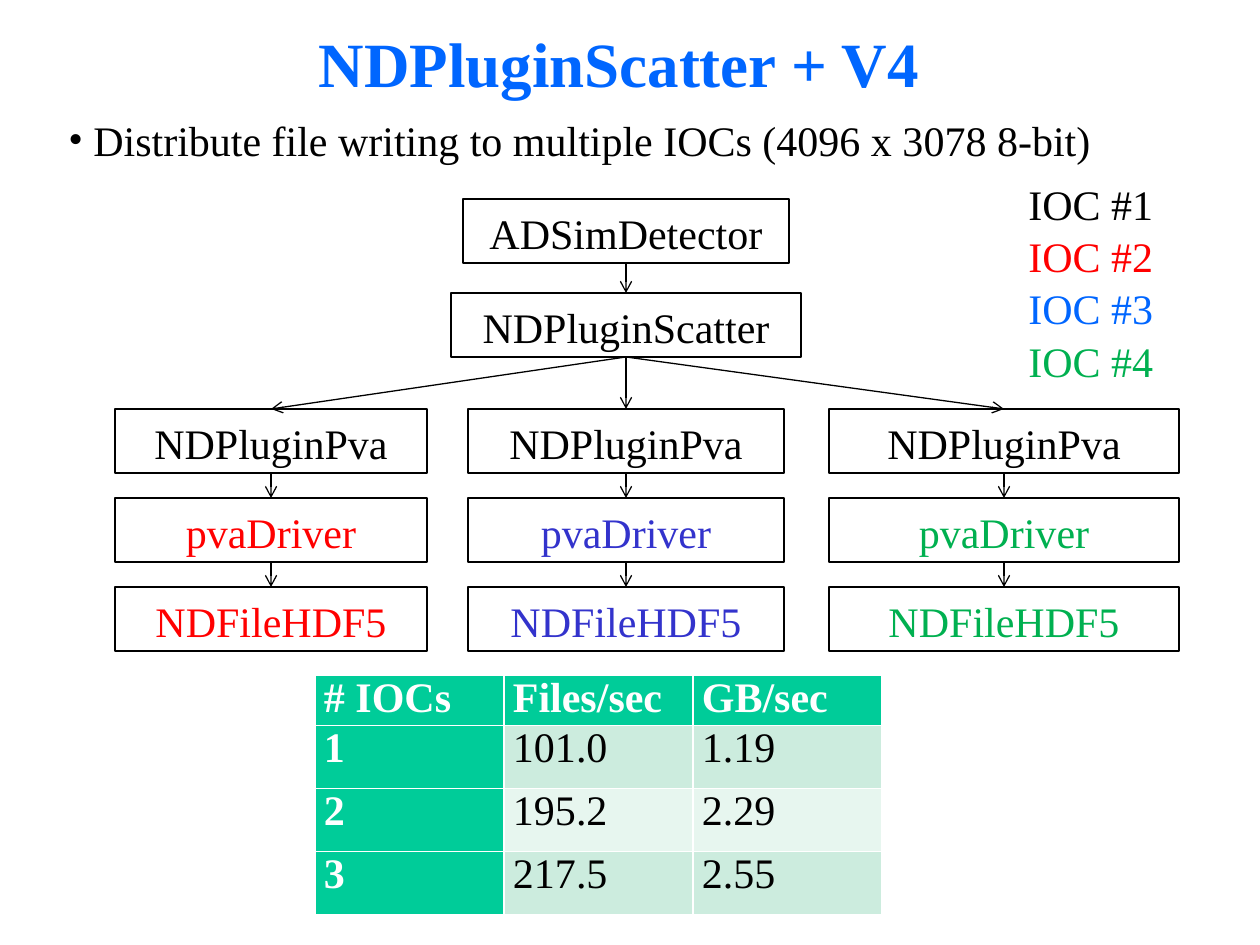
from lxml import etree
from pptx import Presentation, util as u
from pptx.dml.color import RGBColor
from pptx.enum import shapes, text
from pptx.oxml.ns import qn

PX = 914400 / 126
BLACK, WHITE, RED = "000000", "FFFFFF", "FF0000"
BLUE, NAVY, GREEN = "0066FF", "3333CC", "00B050"
TOP, FOOT = 0, 2  # connection sites of a rectangle


def px(n):
    return u.Emu(round(n * PX))


def rgb(code):
    return RGBColor.from_string(code)


class Deck:
    face, size, thin = "Times New Roman", 24, 0.75

    def __init__(self, wide, high):
        self.prs = Presentation()
        self.prs.slide_width, self.prs.slide_height = px(wide), px(high)
        self.slide = self.prs.slides.add_slide(self.prs.slide_layouts[5])

    def style(self, para, color=BLACK, size=None, bold=False, align=None):
        font = para.font
        font.name, font.size, font.bold = self.face, u.Pt(size or self.size), bold
        font.color.rgb = rgb(color)
        para.alignment = align

    def title(self, words, x, y, w, h):
        head = self.slide.shapes.title
        head.left, head.top, head.width, head.height = map(px, (x, y, w, h))
        frame = head.text_frame
        frame.text = words
        frame.vertical_anchor = text.MSO_ANCHOR.MIDDLE
        self.style(frame.paragraphs[0], BLUE, 36, True, text.PP_ALIGN.CENTER)

    def note(self, lines, x, y, w, h, space=1.04):
        frame = self.slide.shapes.add_textbox(*map(px, (x, y, w, h))).text_frame
        frame.word_wrap = True
        frame.text = "\n".join(words for words, _ in lines)
        for para, (_, color) in zip(frame.paragraphs, lines):
            self.style(para, color)
            para.line_spacing = space
        return frame

    def bullet(self, words, x, y, w, h):
        para = self.note([(words, BLACK)], x, y, w, h, 0.8).paragraphs[0]
        para.space_before = u.Pt(4.8)
        props = para._p.get_or_add_pPr()
        props.set("marL", str(px(25)))
        props.set("indent", str(px(-25)))
        etree.SubElement(props, qn("a:buFont")).set("typeface", self.face)
        mark = etree.SubElement(props, qn("a:buChar"))
        mark.set("char", "•")
        # the default run style comes last in the paragraph properties
        props.append(props.find(qn("a:defRPr")))

    def box(self, words, mid, y, w, color=BLACK, h=64):
        rect = self.slide.shapes.add_shape(
            shapes.MSO_SHAPE.RECTANGLE, *map(px, (mid - w / 2, y, w, h)))
        rect.shadow.inherit = False
        rect.fill.background()
        rect.line.color.rgb, rect.line.width = rgb(BLACK), u.Pt(self.thin)
        frame = rect.text_frame
        frame.text = words
        frame.vertical_anchor = text.MSO_ANCHOR.TOP
        para = frame.paragraphs[0]
        self.style(para, color, align=text.PP_ALIGN.CENTER)
        para.line_spacing = 1.04
        return rect

    def arrow(self, start, end):
        link = self.slide.shapes.add_connector(
            shapes.MSO_CONNECTOR.STRAIGHT, 0, 0, 0, 0)
        link.begin_connect(start, FOOT)
        link.end_connect(end, TOP)
        link.line.color.rgb, link.line.width = rgb(BLACK), u.Pt(self.thin)
        line = link.line._get_or_add_ln()
        etree.SubElement(line, qn("a:tailEnd")).set("type", "arrow")
        etree.SubElement(link._element.spPr, qn("a:effectLst"))

    def table(self, rows, x, y, w, highs):
        grid = self.slide.shapes.add_table(
            len(rows), len(rows[0]), *map(px, (x, y, w, sum(highs)))).table
        grid.first_col = True
        for r, row in enumerate(rows):
            grid.rows[r].height = px(highs[r])
            for c, words in enumerate(row):
                cell = grid.cell(r, c)
                head = r == 0 or c == 0
                cell.text = words
                cell.margin_left = cell.margin_right = px(9)
                cell.margin_top = cell.margin_bottom = 0
                cell.fill.solid()
                band = "CCECDE" if r % 2 else "E7F6EF"
                cell.fill.fore_color.rgb = rgb("00CC99" if head else band)
                self.style(cell.text_frame.paragraphs[0], WHITE if head else BLACK,
                           bold=head, align=text.PP_ALIGN.JUSTIFY)


def main():
    deck = Deck(1260, 945)

    # Heading
    deck.title("NDPluginScatter + V4", 189, 10, 860, 105)
    deck.bullet("Distribute file writing to multiple IOCs (4096 x 3078 8-bit)",
                56, 118, 1124, 63)

    # Results
    deck.table([("# IOCs", "Files/sec", "GB/sec"),
                ("1", "101.0", "1.19"),
                ("2", "195.2", "2.29"),
                ("3", "217.5", "2.55")], 315, 675, 567, [42, 63, 63, 63])

    # Source and scatter
    source = deck.box("ADSimDetector", 626, 199, 326)
    scatter = deck.box("NDPluginScatter", 626, 293, 350)
    deck.arrow(source, scatter)

    # One chain for each receiving IOC
    for mid, wide, color in ((271, 312, RED), (626, 316, NAVY), (1004, 350, GREEN)):
        last = scatter
        for step, words in enumerate(("NDPluginPva", "pvaDriver", "NDFileHDF5")):
            node = deck.box(words, mid, 409 + 89 * step, wide,
                            color if step else BLACK)
            deck.arrow(last, node)
            last = node

    # Colour key
    keys = (BLACK, RED, BLUE, GREEN)
    deck.note([(f"IOC #{n}", color) for n, color in enumerate(keys, 1)],
              1016, 170, 168, 217)

    deck.prs.save("out.pptx")


if __name__ == "__main__":
    main()
